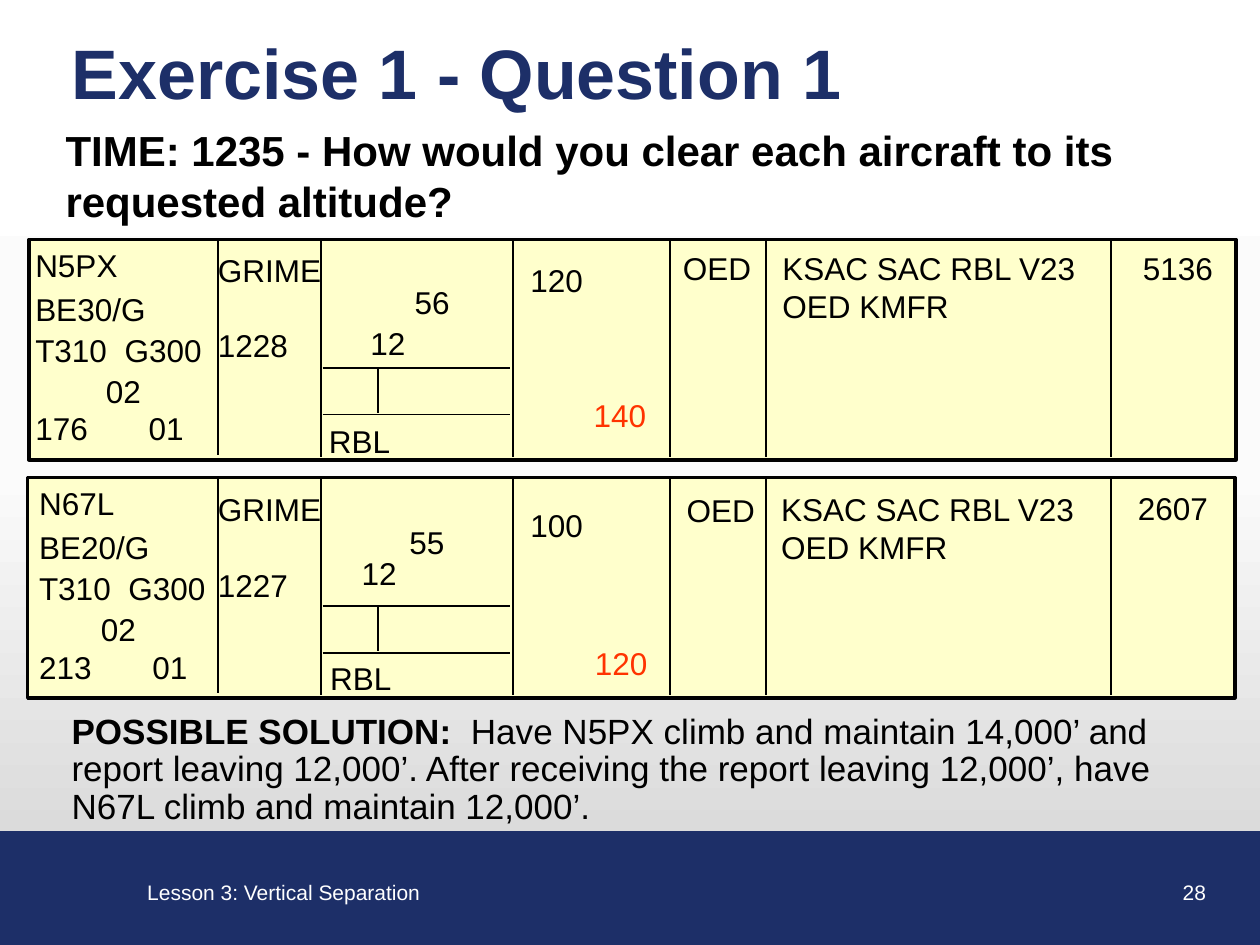
"""Build the vertical separation exercise slide with two flight progress strips."""
from copy import deepcopy

from lxml import etree
from pptx import Presentation, util as u
from pptx.dml.color import RGBColor
from pptx.enum import shapes, text
from pptx.oxml.ns import qn

COLORS = {"navy": "1D2F68", "black": "000000", "white": "FFFFFF", "strip": "FFFFCC", "request": "FF3300"}
BACKGROUND = [(0, "FFFFFF"), (0.5, "FBFBFB"), (1, "D0D0D0")]

HEADINGS = [
    ((0.47, 0.23, 9.27, 0.67), [("Exercise 1 - Question 1", True)],
     {"size": 40, "color": "navy", "inset": 0.1, "anchor": text.MSO_ANCHOR.MIDDLE}),
    ((0.47, 0.94, 9.48, 0.94),
     [("TIME: 1235 - How would you clear each aircraft to its requested altitude?", True)], {"size": 24}),
]
SOLUTION = ((0.47, 5.46, 9.34, 1.31), [
    ("POSSIBLE SOLUTION:", True),
    ("  Have N5PX climb and maintain 14,000’ and report leaving 12,000’. After receiving "
     "the report leaving 12,000’, have N67L climb and maintain 12,000’.", False)],
    {"size": 20, "inset": 0.1, "anchor": text.MSO_ANCHOR.MIDDLE, "line_spacing": 0.9})
FOOTER = [
    ((1.07, 6.93, 2.38, 0.3), "Lesson 3: Vertical Separation", {"wrap": False}),
    ((7.59, 6.93, 2.08, 0.3), "28", {"alignment": text.PP_ALIGN.RIGHT}),
]

STRIP_WIDTH, STRIP_HEIGHT = 9.58, 1.75
COLUMN_LINES = [(1.73, 1.71)] + [(x, 1.73) for x in (2.55, 4.07, 5.32, 6.08, 8.82)]
CELL_LINES = [(2.56, 1.02, 4.05, 1.02), (2.56, 1.39, 4.05, 1.39), (3, 1.02, 3, 1.38)]
ROUTE = "KSAC SAC RBL V23 OED KMFR"
STRIPS = [
    {"left": 0.23, "top": 1.9, "aircraft_left": 0.23, "indent": 0.56,
     "aircraft": ["N5PX", "BE30/G", "T310\tG300", "02", "176\t01"],
     "fix": ("GRIME", "1228", 1.94),
     "entries": [("12", 2.89, 2.52, 0.43), ("56", 3.24, 2.2, 0.7), ("RBL", 2.56, 3.3, 0.9),
                 ("120", 4.16, 2.02, 0.6), ("OED", 5.37, 1.93, 0.68),
                 (ROUTE, 6.16, 1.93, 2.65), ("5136", 9.02, 1.93, 0.98)],
     "request": ("140", 4.56, 3.09, 0.72)},
    {"left": 0.22, "top": 3.79, "aircraft_left": 0.26, "indent": 0.49,
     "aircraft": ["N67L", "BE20/G", "T310\tG300", "02", "213\t01"],
     "fix": ("GRIME", "1227", 3.84),
     "entries": [("12", 2.82, 4.35, 0.43), ("55", 3.2, 4.1, 0.56), ("RBL", 2.57, 5.18, 0.9),
                 ("100", 4.16, 3.97, 0.6), ("OED", 5.4, 3.85, 0.65),
                 (ROUTE, 6.15, 3.84, 2.65), ("2607", 8.98, 3.83, 1.02)],
     "request": ("120", 4.5, 5.06, 0.86)},
]
AIRCRAFT_GAPS = [0, 3.6, 1.8, 1.8, 0]
AIRCRAFT_TABS = {2: 0.71, 4: 0.9}


def inches(values):
    return [u.Inches(value) for value in values]


def rgb(name):
    return RGBColor.from_string(COLORS[name])


def add_text(slide, box, paragraphs, size=18, color="black", inset=0.05, wrap=True,
             anchor=text.MSO_ANCHOR.TOP, **paragraph_format):
    frame = slide.shapes.add_textbox(*inches(box)).text_frame
    frame_format = {"word_wrap": wrap, "vertical_anchor": anchor,
                    "margin_left": u.Inches(inset), "margin_right": u.Inches(inset),
                    "margin_top": u.Inches(0.05), "margin_bottom": u.Inches(0.05)}
    for name, value in frame_format.items():
        setattr(frame, name, value)
    for index, runs in enumerate(paragraphs):
        paragraph = frame.add_paragraph() if index else frame.paragraphs[0]
        for name, value in paragraph_format.items():
            setattr(paragraph, name, value)
        for words, bold in runs:
            run = paragraph.add_run()
            run.text = words
            for name, value in {"name": "Arial", "size": u.Pt(size), "bold": bold}.items():
                setattr(run.font, name, value)
            run.font.color.rgb = rgb(color)
    return frame.paragraphs


def add_plain(slide, box, lines, **options):
    return add_text(slide, box, [[(line, False)] for line in lines], **options)


def add_block(slide, box, fill, line, width):
    shape = slide.shapes.add_shape(shapes.MSO_SHAPE.RECTANGLE, *inches(box))
    shape.shadow.inherit = False
    shape.fill.solid()
    shape.fill.fore_color.rgb = rgb(fill)
    shape.line.color.rgb = rgb(line)
    shape.line.width = u.Pt(width)


def add_line(slide, ends):
    line = slide.shapes.add_connector(shapes.MSO_CONNECTOR.STRAIGHT, *inches(ends))
    line.line.color.rgb = rgb("black")
    line.line.width = u.Pt(1)
    etree.SubElement(line.element.spPr, qn("a:effectLst"))


def add_aircraft(slide, strip):
    box = (strip["aircraft_left"], strip["top"], 1.48, 1.7)
    paragraphs = add_plain(slide, box, strip["aircraft"])
    for index, (paragraph, gap) in enumerate(zip(paragraphs, AIRCRAFT_GAPS)):
        properties = paragraph._p.get_or_add_pPr()
        if index in AIRCRAFT_TABS:
            tabs = etree.SubElement(properties, qn("a:tabLst"))
            etree.SubElement(tabs, qn("a:tab"), pos=str(u.Inches(AIRCRAFT_TABS[index])), algn="l")
        if gap:
            paragraph.space_before = u.Pt(gap)
    paragraphs[3]._p.get_or_add_pPr().set("marL", str(u.Inches(strip["indent"])))


def add_strip(slide, strip):
    top = strip["top"]
    add_block(slide, (strip["left"], top, STRIP_WIDTH, STRIP_HEIGHT), "strip", "black", 2)
    for x, length in COLUMN_LINES:
        add_line(slide, (x, top, x, top + length))
    for x1, y1, x2, y2 in CELL_LINES:
        add_line(slide, (x1, top + y1, x2, top + y2))
    add_aircraft(slide, strip)
    fix, time, fix_top = strip["fix"]
    paragraphs = add_plain(slide, (1.68, fix_top, 1, 0.92), [fix, time])
    paragraphs[1].space_before = u.Pt(21.7)
    for words, left, entry_top, width in strip["entries"]:
        add_plain(slide, (left, entry_top, width, 0.4), [words])
    words, left, request_top, width = strip["request"]
    add_plain(slide, (left, request_top, width, 0.4), [words], color="request",
              alignment=text.PP_ALIGN.CENTER)


def set_background(slide):
    fill = slide.background.fill
    fill.gradient()
    fill.gradient_angle = 270
    stop_list = next(slide.element.iter(qn("a:gsLst")))
    stop_list.insert(1, deepcopy(stop_list[0]))
    for stop, (position, color) in zip(fill.gradient_stops, BACKGROUND):
        stop.position = position
        stop.color.rgb = RGBColor.from_string(color)


def main():
    presentation = Presentation()
    presentation.slide_width, presentation.slide_height = inches((10, 7.5))
    slide = presentation.slides.add_slide(presentation.slide_layouts[6])
    set_background(slide)
    add_block(slide, (0, 6.6, 10, 0.9), "navy", "navy", 0.75)
    for box, words, options in FOOTER:
        add_plain(slide, box, [words], size=12, color="white", inset=0.1, **options)
    for box, runs, options in HEADINGS:
        add_text(slide, box, [runs], **options)
    for strip in STRIPS:
        add_strip(slide, strip)
    box, runs, options = SOLUTION
    add_text(slide, box, [runs], **options)
    presentation.save("out.pptx")


if __name__ == "__main__":
    main()
